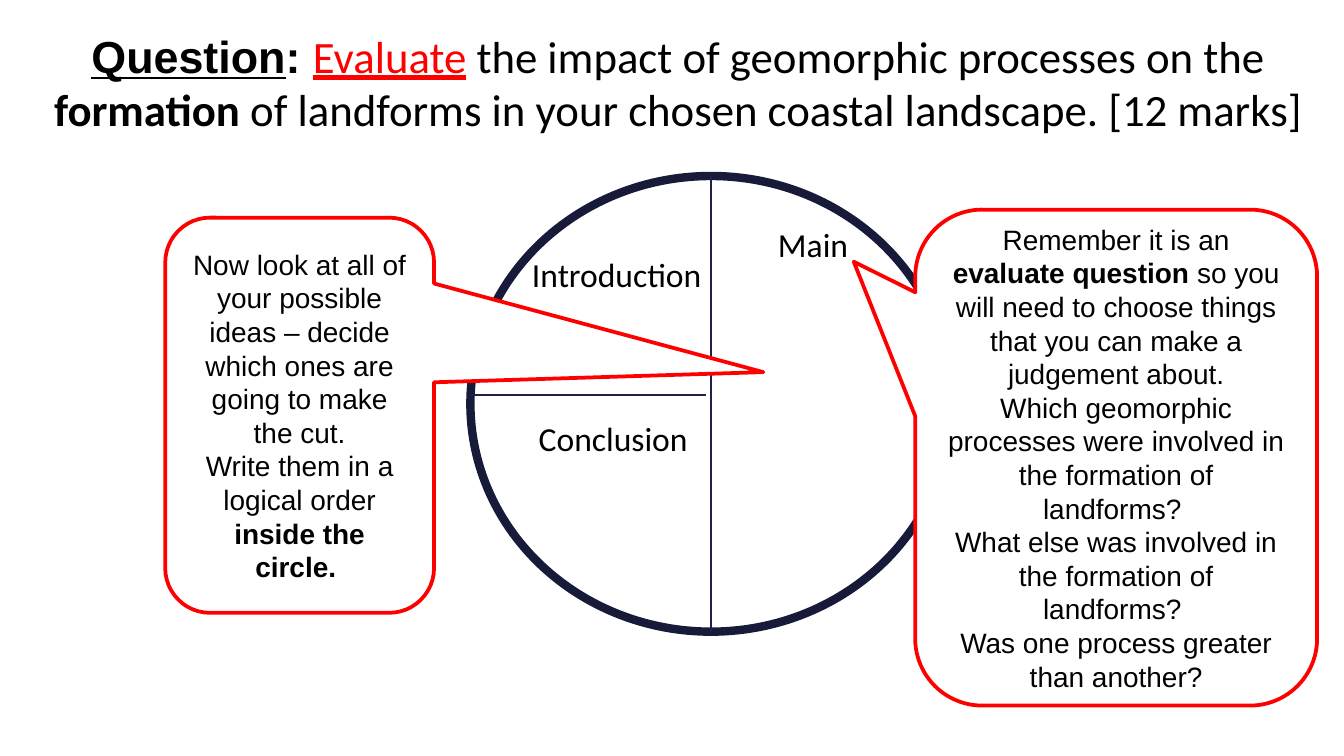
from lxml import etree
from pptx import Presentation
from pptx.dml.color import RGBColor
from pptx.enum.shapes import MSO_CONNECTOR, MSO_SHAPE
from pptx.enum.text import MSO_ANCHOR, MSO_AUTO_SIZE, PP_ALIGN
from pptx.oxml.ns import qn
from pptx.util import Inches, Pt

STRAIGHT = MSO_CONNECTOR.STRAIGHT
OVAL = MSO_SHAPE.OVAL
CALLOUT = MSO_SHAPE.ROUNDED_RECTANGULAR_CALLOUT
MIDDLE = MSO_ANCHOR.MIDDLE
CENTER = PP_ALIGN.CENTER
NO_AUTOFIT = MSO_AUTO_SIZE.NONE
GROW = MSO_AUTO_SIZE.SHAPE_TO_FIT_TEXT

COLORS = {"white": "FFFFFF", "black": "000000", "red": "FF0000",
          "ring": "181A39", "divider": "1E214C"}
HEADING_FONT, BODY_FONT = "Arial", "Calibri"


def color(name):
    return RGBColor.from_string(COLORS[name])


class SlideBuilder:
    def __init__(self, deck):
        self.slide = deck.slides.add_slide(deck.slide_layouts[5])

    def format_font(self, font, name, size, color_name="black"):
        font.name = name
        font.size = Pt(size)
        font.color.rgb = color(color_name)

    def title(self, left, top, width, height, spans):
        box = self.slide.shapes.title
        box.left, box.top = Inches(left), Inches(top)
        box.width, box.height = Inches(width), Inches(height)
        frame = box.text_frame
        frame.auto_size = NO_AUTOFIT
        frame.word_wrap = True
        frame.vertical_anchor = MIDDLE
        frame.margin_left = frame.margin_right = Inches(0.07)
        frame.margin_top = frame.margin_bottom = Inches(0.04)
        para = frame.paragraphs[0]
        para.alignment = CENTER
        for text, font_name, color_name, bold, underline in spans:
            span = para.add_run()
            span.text = text
            self.format_font(span.font, font_name, 24, color_name)
            span.font.bold = bold
            span.font.underline = underline

    def shape(self, kind, left, top, width, height, line, weight):
        shape = self.slide.shapes.add_shape(
            kind, Inches(left), Inches(top), Inches(width), Inches(height))
        shape.shadow.inherit = False
        shape.fill.solid()
        shape.fill.fore_color.rgb = color("white")
        shape.line.color.rgb = color(line)
        shape.line.width = Pt(weight)
        return shape

    def divider(self, x1, y1, x2, y2):
        line = self.slide.shapes.add_connector(
            STRAIGHT, Inches(x1), Inches(y1), Inches(x2), Inches(y2))
        line.line.color.rgb = color("divider")
        line.line.width = Pt(0.75)
        etree.SubElement(line._element.spPr, qn("a:effectLst"))

    def label(self, left, top, width, text):
        box = self.slide.shapes.add_textbox(
            Inches(left), Inches(top), Inches(width), Inches(0.4))
        frame = box.text_frame
        frame.word_wrap = True
        frame.auto_size = GROW
        para = frame.paragraphs[0]
        para.text = text
        self.format_font(para.font, BODY_FONT, 18)

    def callout(self, left, top, width, height, tip, paragraphs):
        """Each paragraph is a list of (text, bold) spans."""
        box = self.shape(CALLOUT, left, top, width, height, "red", 2)
        box.adjustments[0], box.adjustments[1] = tip
        frame = box.text_frame
        frame.word_wrap = True
        frame.vertical_anchor = MIDDLE
        for index, spans in enumerate(paragraphs):
            para = frame.add_paragraph() if index else frame.paragraphs[0]
            para.alignment = CENTER
            self.format_font(para.font, HEADING_FONT, 15)
            for text, bold in spans:
                span = para.add_run()
                span.text = text
                span.font.bold = bold


def main():
    # Widescreen page, 16:9
    deck = Presentation()
    deck.slide_width = Inches(10)
    deck.slide_height = deck.slide_width * 9 // 16
    page = SlideBuilder(deck)

    # Exam question
    page.title(0.28, 0.14, 9.53, 0.94, [
        ("Question", HEADING_FONT, "black", True, True),
        (": ", HEADING_FONT, "black", True, False),
        ("Evaluate", BODY_FONT, "red", False, True),
        (" the impact of geomorphic processes on the ",
         BODY_FONT, "black", False, False),
        ("formation", BODY_FONT, "black", True, False),
        (" of landforms in your chosen coastal landscape. [12 marks]",
         BODY_FONT, "black", False, False),
    ])

    # Planning circle with its three sections
    page.shape(OVAL, 3.5, 1.31, 3.58, 3.39, "ring", 4.5)
    page.divider(5.29, 1.31, 5.29, 4.7)
    page.divider(3.5, 2.94, 5.25, 2.94)
    page.label(3.86, 1.84, 1.51, "Introduction")
    page.label(5.69, 1.62, 0.91, "Main")
    page.label(3.91, 3.06, 1.45, "Conclusion")

    # Instruction callouts
    page.callout(1.23, 1.62, 2, 2.94, (1.725, -0.109), [
        [("Now look at all of your possible ideas – decide which ones are "
          "going to make the cut.", False)],
        [("Write them in a logical order ", False),
         ("inside the circle. ", True)],
    ])
    page.callout(6.81, 1.56, 2.99, 3.69, (-0.653, -0.395), [
        [("Remember it is an ", False), ("evaluate question ", True),
         ("so you will need to choose things that you can make a judgement "
          "about.", False)],
        [("Which geomorphic processes were involved in the formation of "
          "landforms? ", False)],
        [("What else was involved in the formation of landforms? ", False)],
        [("Was one process greater than another?", False)],
    ])

    deck.save("out.pptx")


if __name__ == "__main__":
    main()
